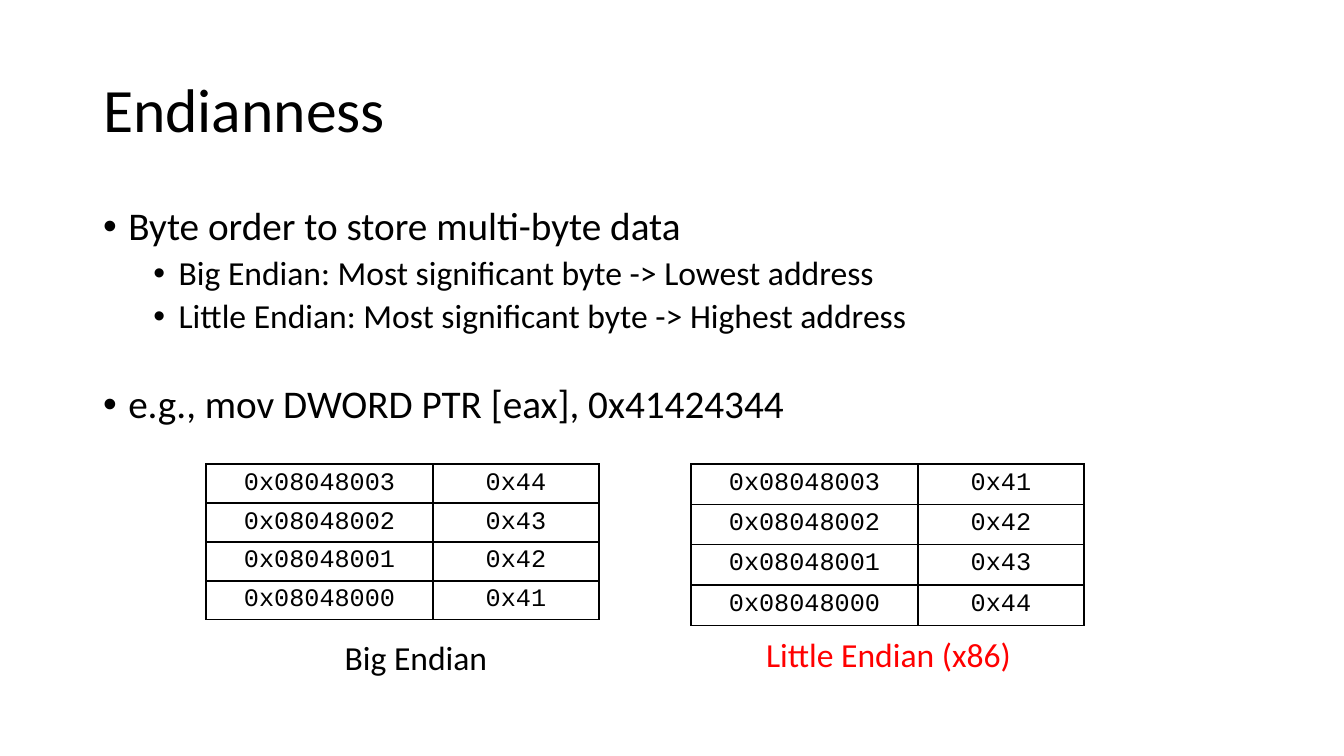
from lxml import etree
from pptx import Presentation
from pptx import util as u
from pptx.dml.color import RGBColor
from pptx.enum import text
from pptx.oxml import ns

PX = 914400 / 100.8
BLACK = RGBColor(0, 0, 0)
RED = RGBColor(255, 0, 0)
SANS, MONO = "Calibri", "Courier New"
BASE = 0x08048000
ROWS = 4

# Text, level, size and space before
POINTS = [
    ("Byte order to store multi-byte data", 0, 28, 10),
    ("Big Endian: Most significant byte -> Lowest address", 1, 24, 5),
    ("Little Endian: Most significant byte -> Highest address", 1, 24, 5),
    ("e.g., mov DWORD PTR [eax], 0x41424344", 0, 28, 35),
]


def px(n):
    return u.Emu(round(n * PX))


def place(shape, *box):
    shape.left, shape.top, shape.width, shape.height = map(px, box)


def style(para, size, font=SANS, color=BLACK, align=text.PP_ALIGN.CENTER):
    para.alignment = align
    for run in para.runs:
        run.font.size = u.Pt(size)
        run.font.name = font
        run.font.color.rgb = color


def add_title(slide, words):
    title = slide.shapes.title
    place(title, 93, 40, 1159, 146)
    frame = title.text_frame
    frame.text = words
    frame.vertical_anchor = text.MSO_ANCHOR.MIDDLE
    para = frame.paragraphs[0]
    para.line_spacing = 0.9
    style(para, 44, align=text.PP_ALIGN.LEFT)


def add_list(slide, points):
    body = slide.placeholders[1]
    place(body, 93, 202, 1159, 480)
    frame = body.text_frame
    frame.auto_size = text.MSO_AUTO_SIZE.NONE
    frame.text = "\n".join(point[0] for point in points)
    for para, (_, level, size, gap) in zip(frame.paragraphs, points):
        para.level = level
        para.line_spacing = 0.9
        para.space_before = u.Pt(gap)
        style(para, size, align=text.PP_ALIGN.LEFT)
        # Bullet and hanging indent
        props = para._p.get_or_add_pPr()
        props.set("marL", str(u.Inches(0.25 + 0.5 * level)))
        props.set("indent", str(u.Inches(-0.25)))
        etree.SubElement(props, ns.qn("a:buFont")).set("typeface", "Arial")
        etree.SubElement(props, ns.qn("a:buChar")).set("char", "•")


def border(cell):
    props = cell._tc.get_or_add_tcPr()
    for i, side in enumerate(("lnL", "lnR", "lnT", "lnB")):
        line = etree.Element(ns.qn("a:" + side), w=str(u.Pt(1)))
        fill = etree.SubElement(line, ns.qn("a:solidFill"))
        etree.SubElement(fill, ns.qn("a:srgbClr")).set("val", str(BLACK))
        props.insert(i, line)


def add_memory(slide, left, top, step, data):
    """Draw memory with the highest address in the top row."""
    frame = slide.shapes.add_table(
        ROWS, 2, px(left), px(top), px(393), px(step * ROWS))
    table = frame.table
    table.first_row = table.horz_banding = False
    for col, width in zip(table.columns, (227, 166)):
        col.width = px(width)
    for i, byte in enumerate(data):
        table.rows[i].height = px(step)
        addr = BASE + ROWS - 1 - i
        for j, words in enumerate((f"0x{addr:08x}", f"0x{byte:02x}")):
            cell = table.cell(i, j)
            cell.text = words
            style(cell.text_frame.paragraphs[0], 18, MONO)
            cell.fill.background()
            border(cell)


def add_label(slide, words, color, *box):
    label = slide.shapes.add_textbox(*map(px, box))
    frame = label.text_frame
    frame.word_wrap = True
    frame.text = words
    style(frame.paragraphs[0], 24, color=color)


def main():
    deck = Presentation()
    deck.slide_width, deck.slide_height = px(1344), px(756)
    slide = deck.slides.add_slide(deck.slide_layouts[1])

    # Heading and points
    add_title(slide, "Endianness")
    add_list(slide, POINTS)

    # Memory in both byte orders
    data = [0x41, 0x42, 0x43, 0x44]
    add_memory(slide, 206, 464, 39, data[::-1])
    add_label(slide, "Big Endian", BLACK, 308, 632, 216, 50)
    add_label(slide, "Little Endian (x86)", RED, 742, 629, 293, 50)
    add_memory(slide, 691, 464, 40, data)

    deck.save("out.pptx")


if __name__ == "__main__":
    main()
